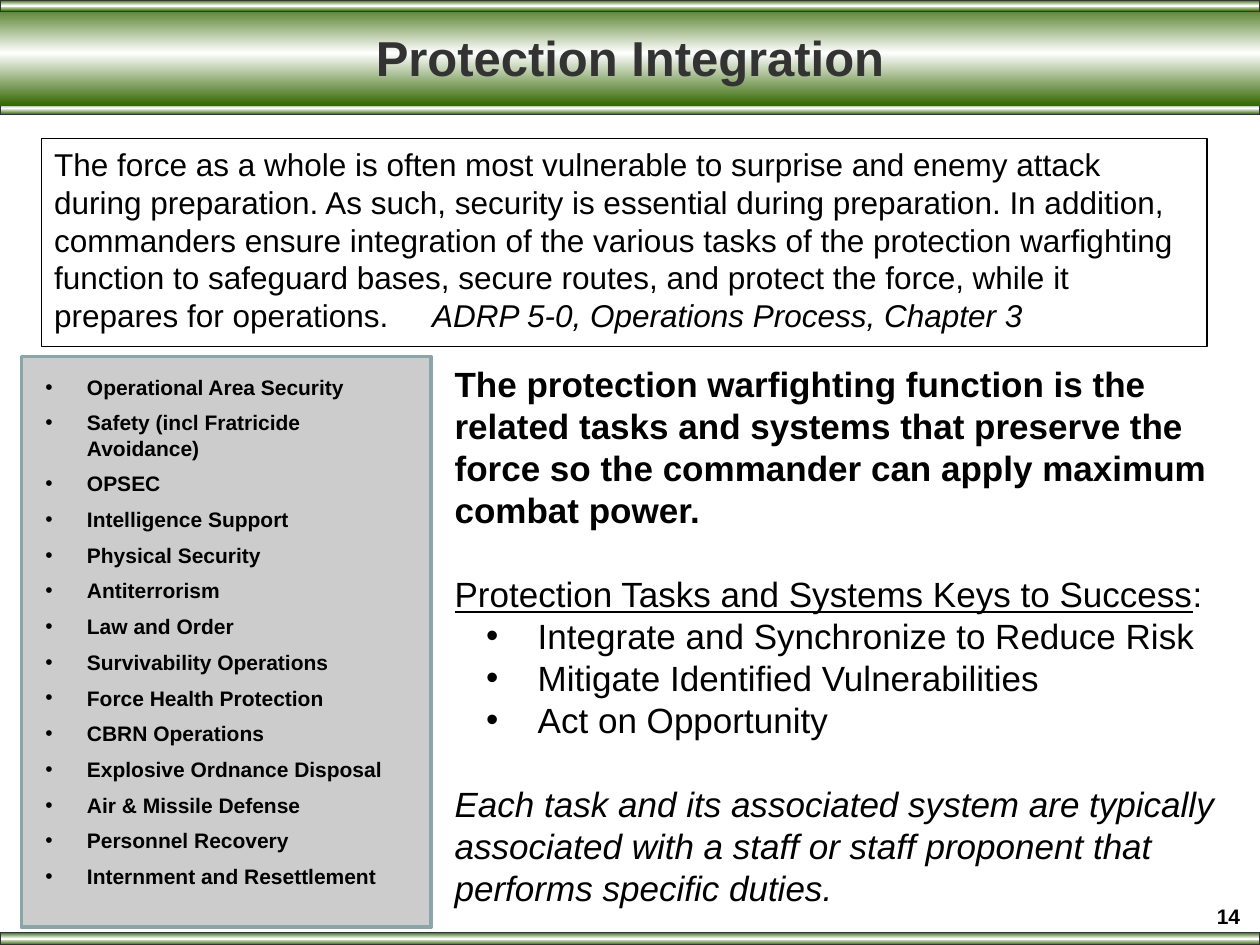
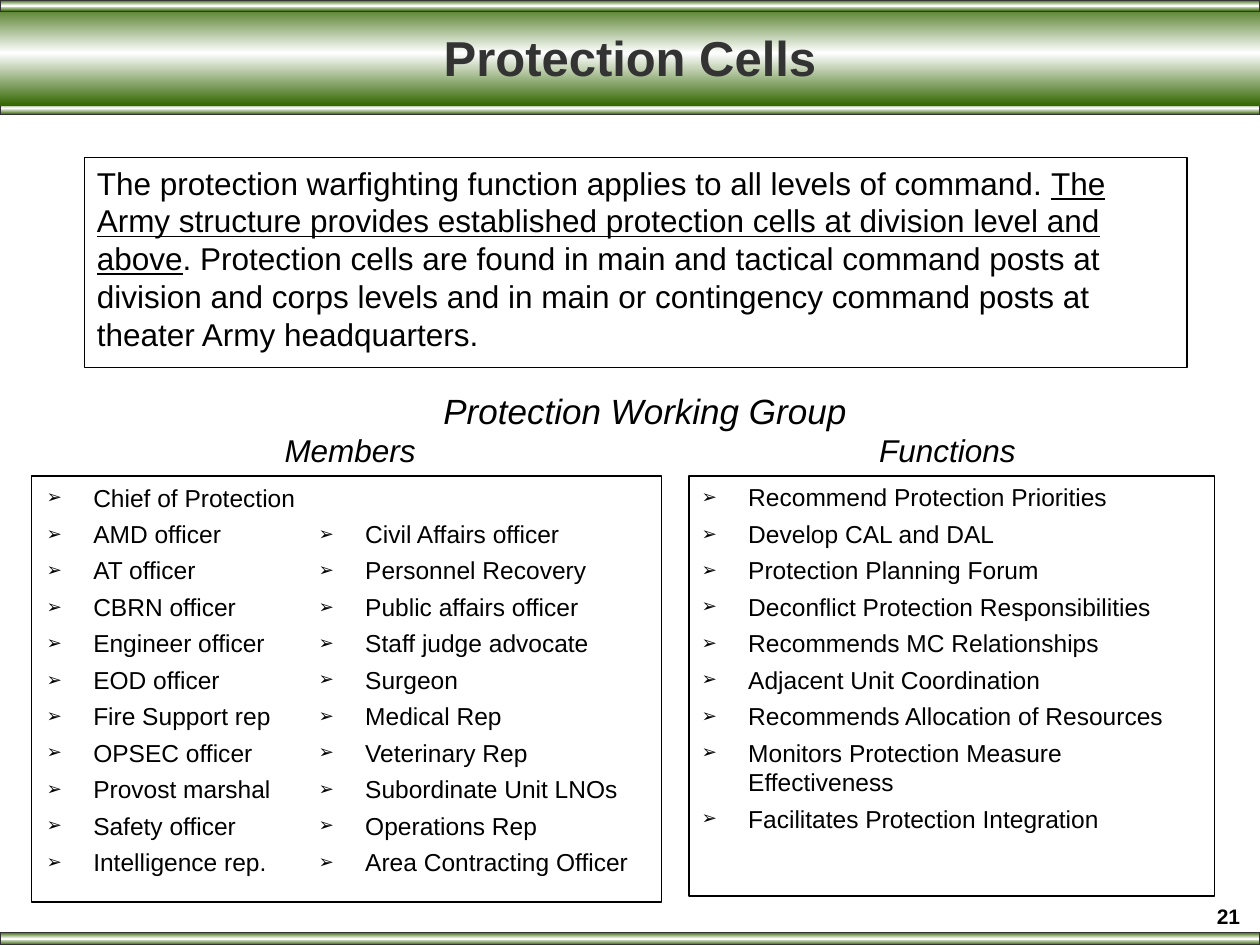
from lxml import etree
from pptx import Presentation
from pptx.dml.color import RGBColor
from pptx.enum.shapes import MSO_SHAPE
from pptx.enum.text import MSO_ANCHOR, MSO_AUTO_SIZE, PP_ALIGN
from pptx.oxml.ns import qn
from pptx.util import Inches, Pt

RECT = MSO_SHAPE.RECTANGLE
TOP, MIDDLE = MSO_ANCHOR.TOP, MSO_ANCHOR.MIDDLE
LEFT, CENTER = PP_ALIGN.LEFT, PP_ALIGN.CENTER
NO_FIT = MSO_AUTO_SIZE.NONE

GREEN = RGBColor(0x33, 0x66, 0x00)
WHITE = RGBColor(0xFF, 0xFF, 0xFF)
BLACK = RGBColor(0x00, 0x00, 0x00)
CHARCOAL = RGBColor(0x33, 0x33, 0x33)
PANEL_GRAY = RGBColor(0xCC, 0xCC, 0xCC)
PANEL_EDGE = RGBColor(0x8A, 0xA6, 0xA8)
FONT = "Arial"

# The slide is a grid of 100 columns by 75 rows
WIDTH, HEIGHT = Inches(10), Inches(7.5)
COL, ROW = WIDTH // 100, HEIGHT // 75

DOT = {"char": "•", "size": 100}
ARROW = {"char": "➢", "size": 75}

SECURITY_TASKS = [
    "Operational Area Security", "Safety (incl Fratricide Avoidance)", "OPSEC",
    "Intelligence Support", "Physical Security", "Antiterrorism",
    "Law and Order", "Survivability Operations", "Force Health Protection",
    "CBRN Operations", "Explosive Ordnance Disposal", "Air & Missile Defense",
    "Personnel Recovery", "Internment and Resettlement",
]
KEYS_TO_SUCCESS = [
    "Integrate and Synchronize to Reduce Risk",
    "Mitigate Identified Vulnerabilities", "Act on Opportunity",
]
MEMBERS = [
    "Chief of Protection", "AMD officer", "AT officer", "CBRN officer",
    "Engineer officer", "EOD officer", "Fire Support rep", "OPSEC officer",
    "Provost marshal", "Safety officer", "Intelligence rep.",
]
MORE_MEMBERS = [
    "Civil Affairs officer", "Personnel Recovery", "Public affairs officer",
    "Staff judge advocate", "Surgeon", "Medical Rep", "Veterinary Rep",
    "Subordinate Unit LNOs", "Operations Rep", "Area Contracting Officer",
]
FUNCTIONS = [
    "Recommend Protection Priorities", "Develop CAL and DAL",
    "Protection Planning Forum", "Deconflict Protection Responsibilities",
    "Recommends MC Relationships", "Adjacent Unit Coordination",
    "Recommends Allocation of Resources",
    "Monitors Protection Measure Effectiveness",
    "Facilitates Protection Integration",
]


def grid(col, row, cols, rows):
    return int(col * COL), int(row * ROW), int(cols * COL), int(rows * ROW)


def place(s, cell):
    s.left, s.top, s.width, s.height = grid(*cell)


def outline(s, color=BLACK, width=1):
    s.line.color.rgb = color
    s.line.width = Pt(width)


# Text
def add_runs(p, runs, size, color=BLACK):
    """Each run is (text, style), where style holds any of b, i and u."""
    for text, style in runs:
        r = p.add_run()
        r.text = text
        f = r.font
        f.name, f.size, f.color.rgb = FONT, Pt(size), color
        f.bold, f.italic, f.underline = (c in style for c in "biu")


def set_indent(p, left=0, hanging=0, bullet=None):
    pPr = p._p.get_or_add_pPr()
    pPr.set("marL", str(Inches(left)))
    pPr.set("indent", str(-Inches(hanging)))
    if bullet:
        etree.SubElement(pPr, qn("a:buSzPct"), val=str(bullet["size"] * 1000))
        etree.SubElement(pPr, qn("a:buFont"), typeface=FONT)
        etree.SubElement(pPr, qn("a:buChar"), char=bullet["char"])
    else:
        etree.SubElement(pPr, qn("a:buNone"))


def add_tab_stop(p, inches):
    tabs = etree.SubElement(p._p.get_or_add_pPr(), qn("a:tabLst"))
    etree.SubElement(tabs, qn("a:tab"), pos=str(Inches(inches)), algn="l")


def add_paragraph(tf, runs, size, before=0, after=0, left=0, hanging=0, bullet=None):
    first = not tf.paragraphs[0].runs
    p = tf.paragraphs[0] if first else tf.add_paragraph()
    set_indent(p, left, hanging, bullet)
    p.alignment = LEFT
    p.space_before, p.space_after = Pt(0 if first else before), Pt(after)
    add_runs(p, runs, size)
    return p


def prepare_frame(s, wrap=True):
    tf = s.text_frame
    tf.auto_size, tf.vertical_anchor, tf.word_wrap = NO_FIT, TOP, wrap
    return tf


def add_text_box(slide, cell, wrap=True):
    return prepare_frame(slide.shapes.add_textbox(*grid(*cell)), wrap)


def add_heading(slide, cell, text, size):
    add_paragraph(add_text_box(slide, cell, wrap=False), [(text, "i")], size)


def add_arrow_list(tf, items):
    for item in items:
        add_paragraph(tf, [(item, "")], 14, before=2, after=2,
                      left=0.37, hanging=0.37, bullet=ARROW)


# Shapes
def add_box(slide, cell, edge=BLACK, width=1, fill=None):
    s = slide.shapes.add_shape(RECT, *grid(*cell))
    s.shadow.inherit = False
    if fill is None:
        s.fill.background()
    else:
        s.fill.solid()
        s.fill.fore_color.rgb = fill
    outline(s, edge, width)
    return s


def add_band(slide, row, rows, edged=True):
    s = add_box(slide, (0, row, 100, rows), CHARCOAL, 0.75)
    if not edged:
        s.line.fill.background()
    s.fill.gradient()
    s.fill.gradient_angle = 270
    stops = s._element.spPr.find(qn("a:gradFill")).find(qn("a:gsLst"))
    for stop in list(stops):
        stops.remove(stop)
    for pos, color in ((0, GREEN), (50, WHITE), (100, GREEN)):
        stop = etree.SubElement(stops, qn("a:gs"), pos=str(pos * 1000))
        etree.SubElement(stop, qn("a:srgbClr"), val=str(color))


def add_framed_slide(prs, title, number):
    slide = prs.slides.add_slide(prs.slide_layouts[1])
    title_shape, body = slide.shapes.title, slide.placeholders[1]

    # Bands: title strip, footer, title, top strip
    add_band(slide, 8.1, 1)
    add_band(slide, 74, 1)
    add_band(slide, 0, 8.4, edged=False)
    add_band(slide, 0, 0.9)

    # Page number
    tf = add_text_box(slide, (95, 71.2, 5, 3.3))
    add_paragraph(tf, [(str(number), "b")], 12).alignment = CENTER

    # Title and body lie in front of the bands
    for s in (title_shape, body):
        slide.shapes._spTree.append(s._element)
    place(title_shape, (5, 0.8, 90, 7.5))
    tf = prepare_frame(title_shape)
    tf.vertical_anchor = MIDDLE
    tf.paragraphs[0].alignment = CENTER
    add_runs(tf.paragraphs[0], [(title, "b")], 28, CHARCOAL)
    return slide, body


def build_integration(prs):
    slide, body = add_framed_slide(prs, "Protection Integration", 14)

    # Doctrine quotation
    place(body, (3.3, 11, 92.5, 16.5))
    outline(body, width=0.75)
    p = add_paragraph(prepare_frame(body), [
        ("The force as a whole is often most vulnerable to surprise and enemy "
         "attack during preparation. As such, security is essential during "
         "preparation. In addition, commanders ensure integration of the "
         "various tasks of the protection warfighting function to safeguard "
         "bases, secure routes, and protect the force, while it prepares for "
         "operations.\t", ""),
        ("ADRP 5-0, Operations Process, Chapter 3", "i")], 18)
    add_tab_stop(p, 3.96)

    # Definition and keys to success
    tf = add_text_box(slide, (35.1, 28.3, 64.6, 45))
    add_paragraph(tf, [(
        "The protection warfighting function is the related tasks and systems "
        "that preserve the force so the commander can apply maximum combat "
        "power.", "b")], 20)
    add_paragraph(tf, [("Protection Tasks and Systems Keys to Success", "u"),
                       (":", "")], 20, before=24)
    for key in KEYS_TO_SUCCESS:
        add_paragraph(tf, [(key, "")], 20, left=0.66, hanging=0.41, bullet=DOT)
    add_paragraph(tf, [(
        "Each task and its associated system are typically associated with a "
        "staff or staff proponent that performs specific duties.", "i")],
        20, before=24)

    # Task panel
    panel = add_box(slide, (1.7, 28.3, 32.5, 45.3), PANEL_EDGE, 2, PANEL_GRAY)
    tf = prepare_frame(panel)
    tf.margin_left, tf.margin_right = Inches(0.19), Inches(0.17)
    tf.margin_top = Inches(0.14)
    for task in SECURITY_TASKS:
        add_paragraph(tf, [(task, "b")], 12, before=6,
                      left=0.33, hanging=0.33, bullet=DOT)


def build_cells(prs):
    slide, body = add_framed_slide(prs, "Protection Cells", 21)

    # Where the cells are found
    tf = prepare_frame(add_box(slide, (6.7, 12.5, 87.5, 16.7), width=0.75))
    add_paragraph(tf, [
        ("The protection warfighting function applies to all levels of "
         "command. ", ""),
        ("The Army structure provides established protection cells at "
         "division level and above", "u"),
        (". Protection cells are found in main and tactical command posts at "
         "division and corps levels and in main or contingency command posts "
         "at theater Army headquarters.", "")], 18)

    # Working group headings
    add_heading(slide, (34.2, 30.4, 34.2, 4.4), "Protection Working Group", 20)
    add_heading(slide, (21.6, 33.7, 12.5, 4), "Members", 18)
    add_heading(slide, (68.8, 33.7, 13, 4), "Functions", 18)

    # Members in two columns, the second starting one line lower
    add_box(slide, (2.5, 37.8, 50, 33.8))
    place(body, (2.7, 37.8, 26.5, 33.5))
    add_arrow_list(prepare_frame(body), MEMBERS)
    add_arrow_list(add_text_box(slide, (24.3, 40.7, 27.5, 30.6)), MORE_MEMBERS)

    # Functions
    functions = add_box(slide, (54.7, 37.8, 41.7, 33.3))
    add_arrow_list(prepare_frame(functions), FUNCTIONS)


def main():
    prs = Presentation()
    prs.slide_width, prs.slide_height = WIDTH, HEIGHT
    build_integration(prs)
    build_cells(prs)
    prs.save("out.pptx")


if __name__ == "__main__":
    main()
